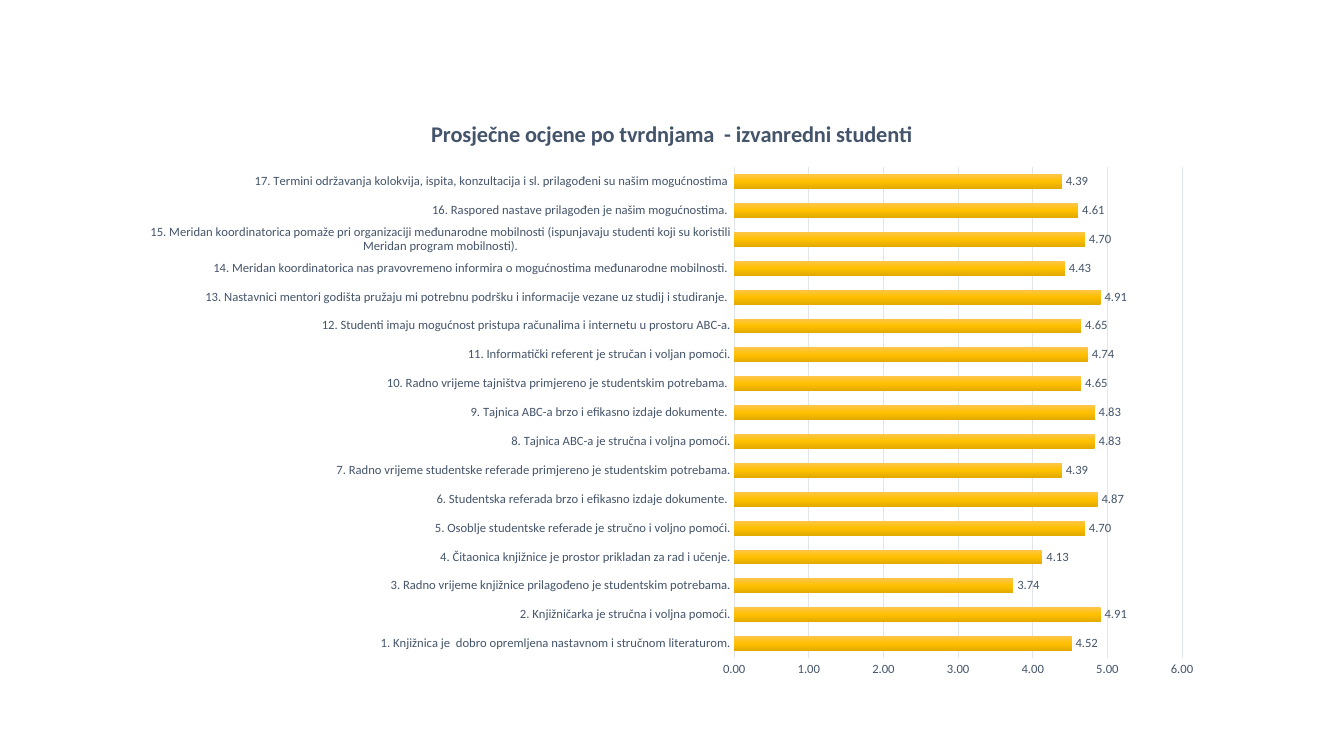
from copy import deepcopy
from dataclasses import dataclass

from lxml.etree import SubElement
from pptx import Presentation
from pptx.chart.data import CategoryChartData
from pptx.dml.color import RGBColor
from pptx.enum.chart import XL_CHART_TYPE, XL_LABEL_POSITION, XL_TICK_MARK
from pptx.oxml.ns import qn
from pptx.util import Cm, Pt


@dataclass(frozen=True)
class Theme:
    """Hold the colours, font and type sizes of the slide."""
    face: str = "Calibri"
    ink: str = "44546A"
    grid: str = "E0E5EB"
    bar: tuple = ((0, "FFC64B"), (0.5, "FFC000"), (1, "E3AB00"))
    head: int = 16
    small: int = 9
    rule: float = 0.75


THEME = Theme()
TITLE = "Prosječne ocjene po tvrdnjama  - izvanredni studenti"
GRADES = [
    ("1. Knjižnica je  dobro opremljena nastavnom i stručnom literaturom.", 4.52),
    ("2. Knjižničarka je stručna i voljna pomoći.", 4.91),
    ("3. Radno vrijeme knjižnice prilagođeno je studentskim potrebama.", 3.74),
    ("4. Čitaonica knjižnice je prostor prikladan za rad i učenje.", 4.13),
    ("5. Osoblje studentske referade je stručno i voljno pomoći.", 4.70),
    ("6. Studentska referada brzo i efikasno izdaje dokumente. ", 4.87),
    ("7. Radno vrijeme studentske referade primjereno je studentskim potrebama.", 4.39),
    ("8. Tajnica ABC-a je stručna i voljna pomoći.", 4.83),
    ("9. Tajnica ABC-a brzo i efikasno izdaje dokumente. ", 4.83),
    ("10. Radno vrijeme tajništva primjereno je studentskim potrebama. ", 4.65),
    ("11. Informatički referent je stručan i voljan pomoći.", 4.74),
    ("12. Studenti imaju mogućnost pristupa računalima i internetu u prostoru ABC-a.", 4.65),
    ("13. Nastavnici mentori godišta pružaju mi potrebnu podršku i informacije "
     "vezane uz studij i studiranje. ", 4.91),
    ("14. Meridan koordinatorica nas pravovremeno informira o mogućnostima "
     "međunarodne mobilnosti. ", 4.43),
    ("15. Meridan koordinatorica pomaže pri organizaciji međunarodne mobilnosti "
     "(ispunjavaju studenti koji su koristili Meridan program mobilnosti).", 4.70),
    ("16. Raspored nastave prilagođen je našim mogućnostima. ", 4.61),
    ("17. Termini održavanja kolokvija, ispita, konzultacija i sl. prilagođeni su "
     "našim mogućnostima ", 4.39),
]


def set_font(font, size, bold=False):
    """Apply the theme face and ink to a font."""
    font.name, font.size, font.bold = THEME.face, Pt(size), bold
    font.color.rgb = RGBColor.from_string(THEME.ink)


def set_line(line):
    """Draw a thin rule in the grid colour."""
    line.color.rgb = RGBColor.from_string(THEME.grid)
    line.width = Pt(THEME.rule)


def shade_bars(bars):
    """Fill the bars with the vertical theme gradient."""
    fill = bars.format.fill
    fill.gradient()
    fill.gradient_angle = 270
    stops = bars._element.xpath(".//a:gsLst")[0]
    stops.append(deepcopy(stops[-1]))
    for stop, (place, tint) in zip(fill.gradient_stops, THEME.bar):
        stop.position = place
        stop.color.rgb = RGBColor.from_string(tint)


def style_axes(chart):
    """Format both axes and the grid."""
    for axis in (chart.category_axis, chart.value_axis):
        axis.major_tick_mark = axis.minor_tick_mark = XL_TICK_MARK.NONE
        set_font(axis.tick_labels.font, THEME.small)
    set_line(chart.category_axis.format.line)
    scale = chart.value_axis
    scale.minimum_scale, scale.maximum_scale, scale.major_unit = 0, 6, 1
    scale.tick_labels.number_format = "0.00"
    scale.tick_labels.number_format_is_linked = False
    scale.format.line.fill.background()
    set_line(scale.major_gridlines.format.line)


def place_plot(chart, **parts):
    """Fix the inner plot area in percent of the chart box."""
    area = chart._chartSpace.chart.plotArea
    for old in area.findall(qn("c:layout")):
        area.remove(old)
    layout = SubElement(area, qn("c:layout"))
    area.insert(0, layout)
    manual = SubElement(layout, qn("c:manualLayout"))
    modes = dict(layoutTarget="inner", xMode="edge", yMode="edge")
    shares = {name: str(part / 100) for name, part in parts.items()}
    for name, value in (modes | shares).items():
        SubElement(manual, qn(f"c:{name}")).set("val", value)


def add_grades(slide, left, top, width, height):
    """Place the bar chart of average grades in the given box."""
    data = CategoryChartData(number_format="0.00")
    data.categories = [name for name, _ in GRADES]
    data.add_series("Prosjek", [grade for _, grade in GRADES])
    chart = slide.shapes.add_chart(
        XL_CHART_TYPE.BAR_CLUSTERED, left, top, width, height, data).chart
    set_font(chart.font, THEME.small)
    chart.has_legend = False
    chart.has_title = True
    title = chart.chart_title.text_frame
    title.text = TITLE
    set_font(title.paragraphs[0].font, THEME.head, True)
    style_axes(chart)
    place_plot(chart, x=55.75, y=11.75, w=41.25, h=83.15)
    plot = chart.plots[0]
    plot.gap_width, plot.vary_by_categories = 100, False
    shade_bars(plot.series[0])
    plot.has_data_labels = True
    labels = plot.data_labels
    labels.show_value = True
    labels.position = XL_LABEL_POSITION.OUTSIDE_END
    labels.number_format, labels.number_format_is_linked = "0.00", False
    set_font(labels.font, THEME.small)


def main():
    """Build and save the slide."""
    deck = Presentation()
    deck.slide_width, deck.slide_height = Cm(33.87), Cm(19.05)
    slide = deck.slides.add_slide(deck.slide_layouts[6])
    add_grades(slide, Cm(3.25), Cm(2.46), Cm(27.36), Cm(14.88))
    deck.save("out.pptx")


if __name__ == "__main__":
    main()
